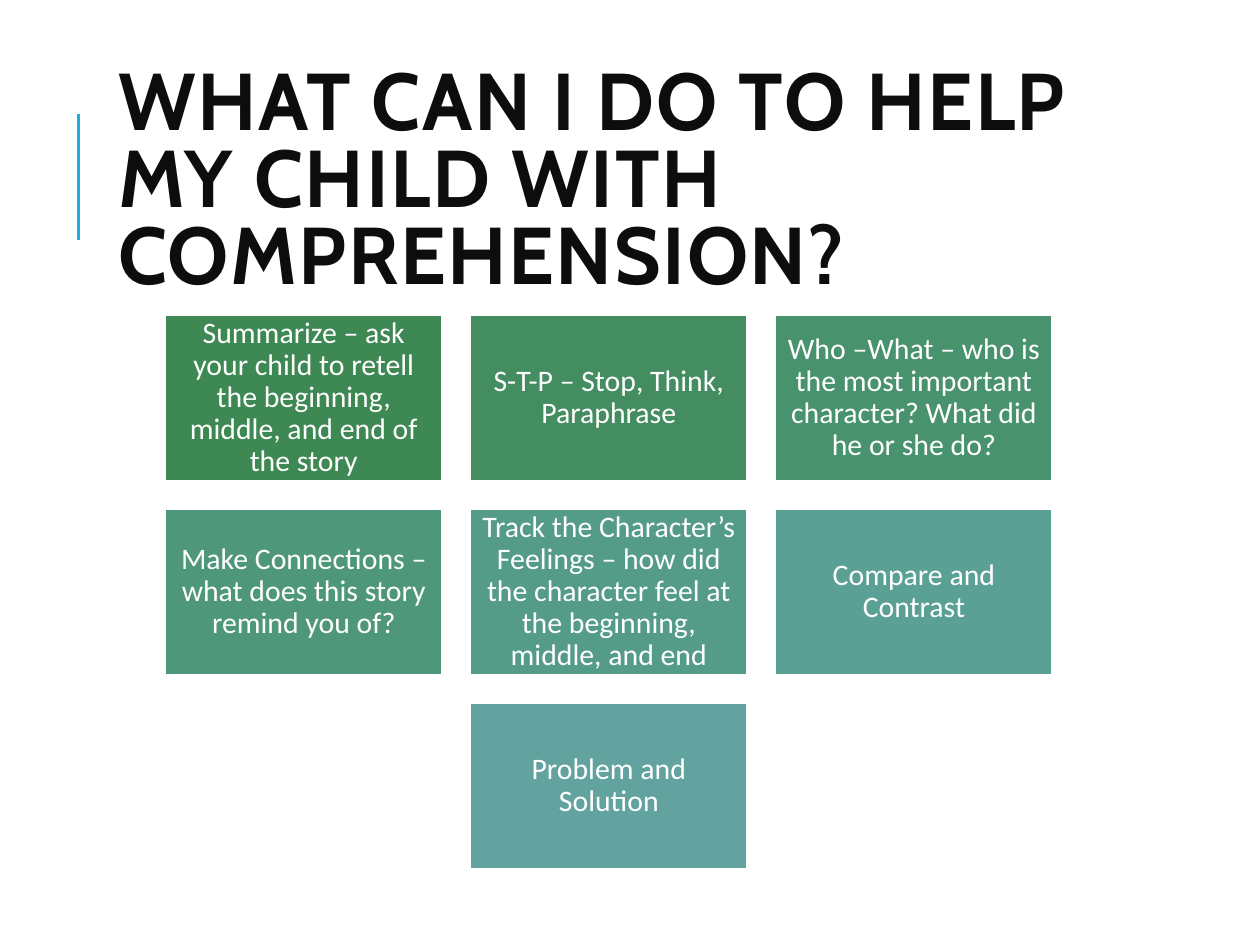
import pptx
import pptx.util
import pptx.dml.color
import pptx.enum.shapes
import pptx.enum.text
import pptx.oxml

Cm, Pt = pptx.util.Cm, pptx.util.Pt
MIDDLE = pptx.enum.text.MSO_ANCHOR.MIDDLE

COLORS = {"accent": "1CADE4", "title": "0D0D0D", "white": "FFFFFF"}

LEFT, TOP = 3.33, 6.35
CARD_W, CARD_H, GAP = 5.59, 3.35, 0.56
COLUMNS = 3

STRATEGIES = [
    ("3E8853", "Summarize – ask your child to retell the beginning, middle, and end of the story"),
    ("438D60", "S-T-P – Stop, Think, Paraphrase"),
    ("49926E", "Who –What – who is the most important character? What did he or she do?"),
    ("4E977B", "Make Connections – what does this story remind you of?"),
    ("549C88", "Track the Character’s Feelings – how did the character feel at the beginning, middle, and end"),
    ("5AA094", "Compare and Contrast"),
    ("62A39F", "Problem and Solution"),
]


def rgb(value):
    return pptx.dml.color.RGBColor.from_string(value)


def write(sp, text, font, size, color, spacing):
    tf = sp.text_frame
    tf.word_wrap = True
    tf.vertical_anchor = MIDDLE
    p = tf.paragraphs[0]
    p.line_spacing = spacing
    p.font.name = font
    p.font.size = Pt(size)
    p.font.color.rgb = rgb(color)
    r = p.add_run()
    r.text = text
    return p, r


def add_title(s, text):
    sp = s.shapes.add_textbox(Cm(2.13), Cm(1.63), Cm(20.24), Cm(4.17))
    p, r = write(sp, text, "Cabin", 46, COLORS["title"], 0.8)
    p.font.bold = True
    r._r.get_or_add_rPr().set("spc", "100")


def add_accent_line(s):
    line = s.shapes.add_connector(
        pptx.enum.shapes.MSO_CONNECTOR.STRAIGHT, Cm(1.58), Cm(4.83), Cm(1.58), Cm(2.29))
    line.line.color.rgb = rgb(COLORS["accent"])
    line.line.width = Pt(1.5)
    line._element.spPr.append(pptx.oxml.parse_xml(
        '<a:effectLst xmlns:a="http://schemas.openxmlformats.org/drawingml/2006/main"/>'))


def add_card(s, column, row, fill, text):
    sp = s.shapes.add_shape(
        pptx.enum.shapes.MSO_SHAPE.RECTANGLE,
        Cm(LEFT + column * (CARD_W + GAP)), Cm(TOP + row * (CARD_H + GAP)),
        Cm(CARD_W), Cm(CARD_H))
    sp.shadow.inherit = False
    sp.fill.solid()
    sp.fill.fore_color.rgb = rgb(fill)
    sp.line.color.rgb = rgb(COLORS["white"])
    sp.line.width = Pt(1.25)
    tf = sp.text_frame
    tf.margin_left = tf.margin_right = tf.margin_top = tf.margin_bottom = Cm(0.18)
    p, _ = write(sp, text, "Calibri", 17, COLORS["white"], 0.9)
    p.alignment = pptx.enum.text.PP_ALIGN.CENTER


def add_cards(s):
    for i, (fill, text) in enumerate(STRATEGIES):
        row, column = divmod(i, COLUMNS)
        in_row = min(COLUMNS, len(STRATEGIES) - row * COLUMNS)
        add_card(s, column + (COLUMNS - in_row) / 2, row, fill, text)


def main():
    prs = pptx.Presentation()
    prs.slide_width, prs.slide_height = Cm(25.4), Cm(19.05)
    s = prs.slides.add_slide(prs.slide_layouts[6])
    add_accent_line(s)
    add_title(s, "WHAT CAN I DO TO HELP MY CHILD WITH COMPREHENSION?")
    add_cards(s)
    prs.save("out.pptx")


if __name__ == "__main__":
    main()
